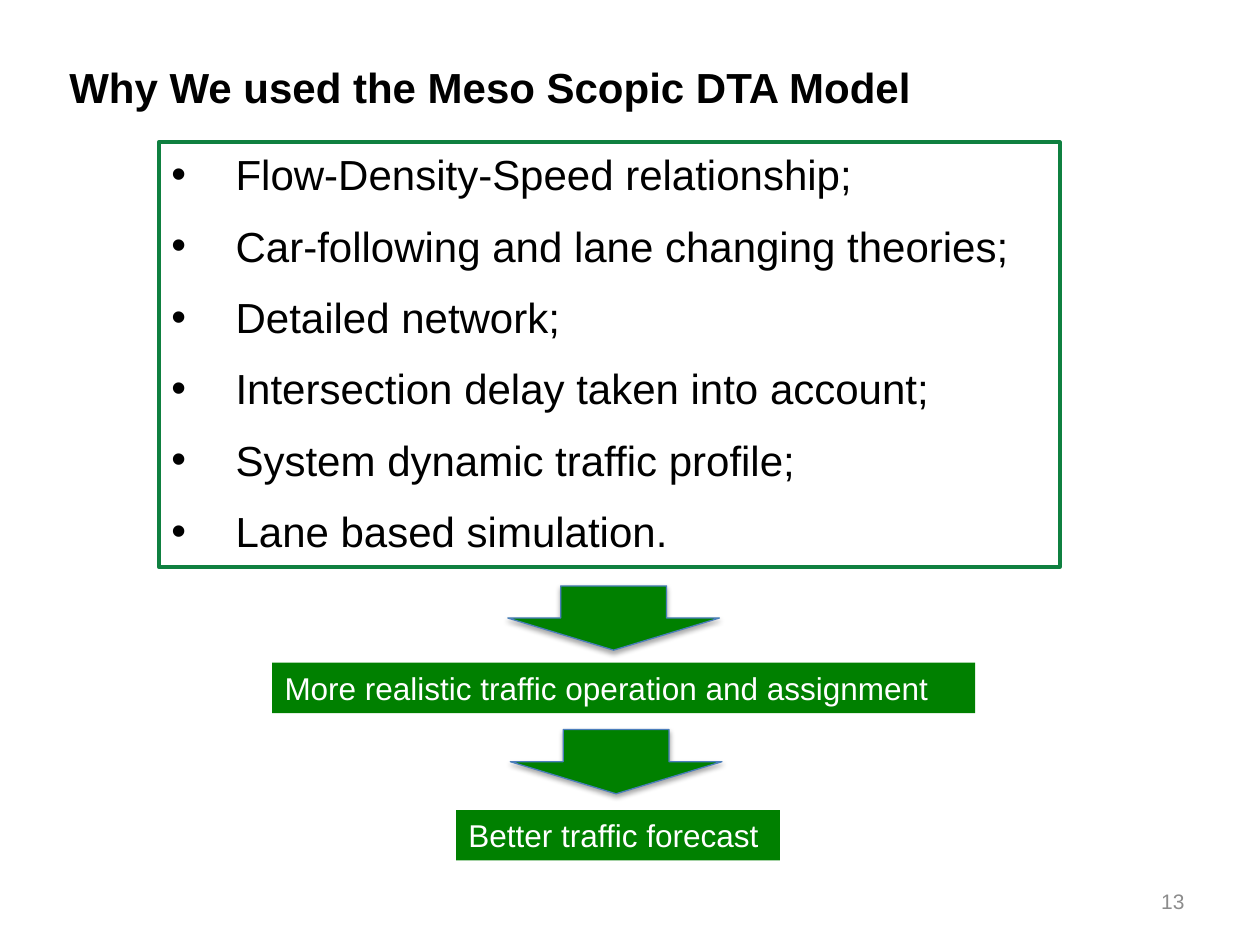
"""Builds the slide on why the mesoscopic DTA model was used."""
from lxml import etree
from pptx import Presentation
from pptx import util as u
from pptx.dml.color import RGBColor
from pptx.enum import shapes, text
from pptx.oxml import ns

TITLE = "Why We used the Meso Scopic DTA Model"
REASONS = [
    "Flow-Density-Speed relationship;",
    "Car-following and lane changing theories;",
    "Detailed network;",
    "Intersection delay taken into account;",
    "System dynamic traffic profile;",
    "Lane based simulation.",
]
OUTCOMES = [
    ("More realistic traffic operation and assignment", (2.16, 5.26, 5.58, 0.4)),
    ("Better traffic forecast", (3.62, 6.43, 2.57, 0.4)),
]
ARROWS = [(4.03, 4.65), (4.05, 5.79)]
ARROW_SIZE = (1.68, 0.51)
PAGE_NUMBER = "13"
GREEN, BORDER, ARROW_EDGE = "008000", "0F8040", "4B7EBC"
BLACK, WHITE, GREY = "000000", "FFFFFF", "8C8C8C"


def color(hex_value):
    return RGBColor.from_string(hex_value)


def place(part, box):
    part.left, part.top, part.width, part.height = map(u.Inches, box)


def write(paragraph, words, size, hex_value, bold=False, align=text.PP_ALIGN.LEFT):
    paragraph.alignment = align
    run = paragraph.add_run()
    run.text = words
    run.font.name = "Arial"
    run.font.size = u.Pt(size)
    run.font.bold = bold
    run.font.color.rgb = color(hex_value)


def set_frame(part, wrap=True, anchor=text.MSO_ANCHOR.TOP):
    frame = part.text_frame
    frame.auto_size = text.MSO_AUTO_SIZE.NONE
    frame.word_wrap = wrap
    frame.vertical_anchor = anchor
    return frame


def add_bullet(paragraph):
    properties = paragraph._p.get_or_add_pPr()
    properties.set("marL", str(u.Inches(0.51)))
    properties.set("indent", str(u.Inches(-0.51)))
    etree.SubElement(properties, ns.qn("a:buFont"), typeface="Arial")
    etree.SubElement(properties, ns.qn("a:buChar"), char="•")


def add_filled(slide, kind, box):
    part = slide.shapes.add_shape(kind, *map(u.Inches, box))
    part.shadow.inherit = False
    part.fill.solid()
    part.fill.fore_color.rgb = color(GREEN)
    part.line.fill.background()
    return part


def add_shadow(part):
    effects = part._element.spPr.find(ns.qn("a:effectLst"))
    shadow = etree.SubElement(
        effects, ns.qn("a:outerShdw"), blurRad=str(u.Pt(3.1)),
        dist=str(u.Pt(1.8)), dir="5400000", rotWithShape="0")
    shade = etree.SubElement(shadow, ns.qn("a:srgbClr"), val=BLACK)
    etree.SubElement(shade, ns.qn("a:alpha"), val="35000")


def main():
    deck = Presentation()
    deck.slide_width, deck.slide_height = u.Inches(10), u.Inches(7.5)
    slide = deck.slides.add_slide(deck.slide_layouts[1])

    title = slide.shapes.title
    place(title, (0.45, 0.44, 7.03, 0.5))
    write(set_frame(title, wrap=False).paragraphs[0], TITLE, 24, BLACK, bold=True)

    reasons = slide.placeholders[1]
    place(reasons, (1.26, 1.13, 7.15, 3.37))
    reasons.line.color.rgb = color(BORDER)
    reasons.line.width = u.Pt(2.25)
    frame = set_frame(reasons)
    for index, reason in enumerate(REASONS):
        paragraph = frame.add_paragraph() if index else frame.paragraphs[0]
        add_bullet(paragraph)
        paragraph.space_before = u.Pt(0)
        paragraph.space_after = u.Pt(12)
        write(paragraph, reason, 24, BLACK)

    for corner in ARROWS:
        arrow = add_filled(slide, shapes.MSO_SHAPE.DOWN_ARROW, corner + ARROW_SIZE)
        arrow.line.color.rgb = color(ARROW_EDGE)
        arrow.line.width = u.Pt(0.75)
        add_shadow(arrow)

    for outcome, box in OUTCOMES:
        banner = add_filled(slide, shapes.MSO_SHAPE.RECTANGLE, box)
        write(set_frame(banner).paragraphs[0], outcome, 18, WHITE)

    number = slide.shapes.add_textbox(*map(u.Inches, (7.17, 6.95, 2.33, 0.4)))
    write(set_frame(number, anchor=text.MSO_ANCHOR.MIDDLE).paragraphs[0],
          PAGE_NUMBER, 12, GREY, align=text.PP_ALIGN.RIGHT)

    deck.save("out.pptx")


if __name__ == "__main__":
    main()
